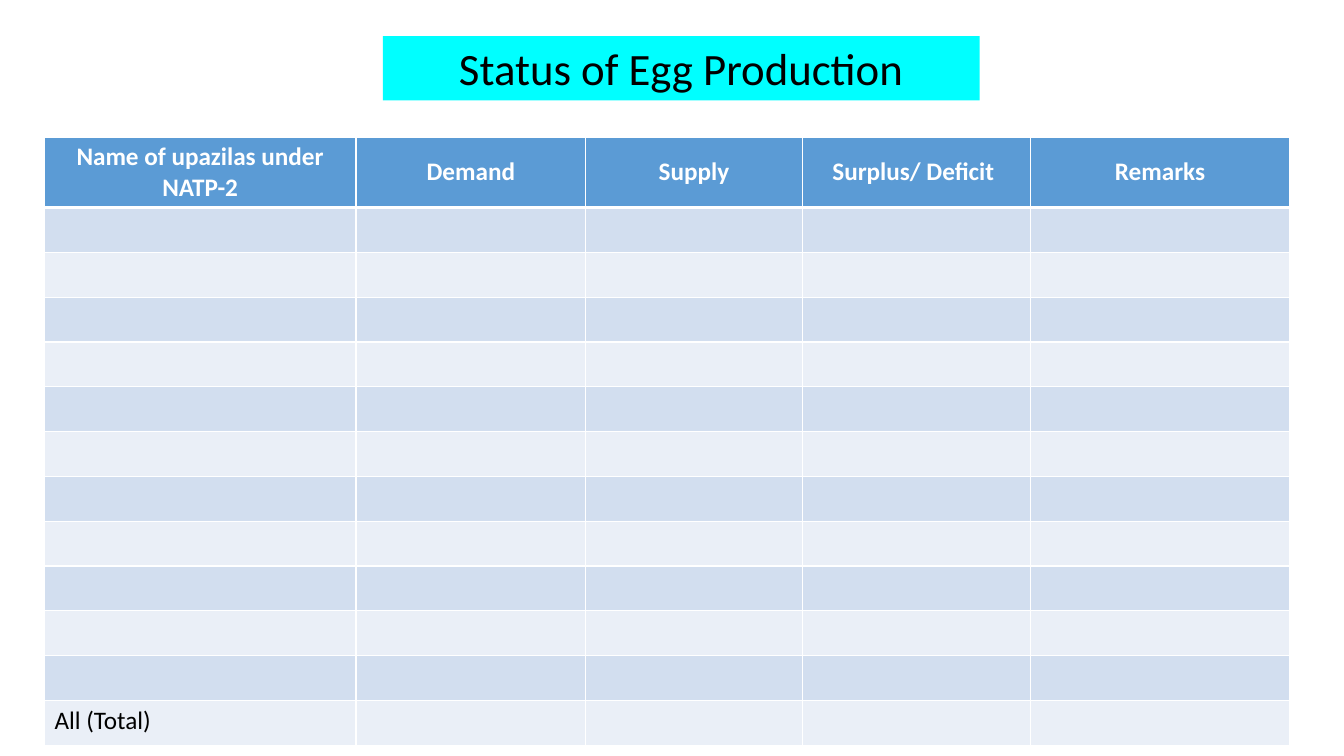
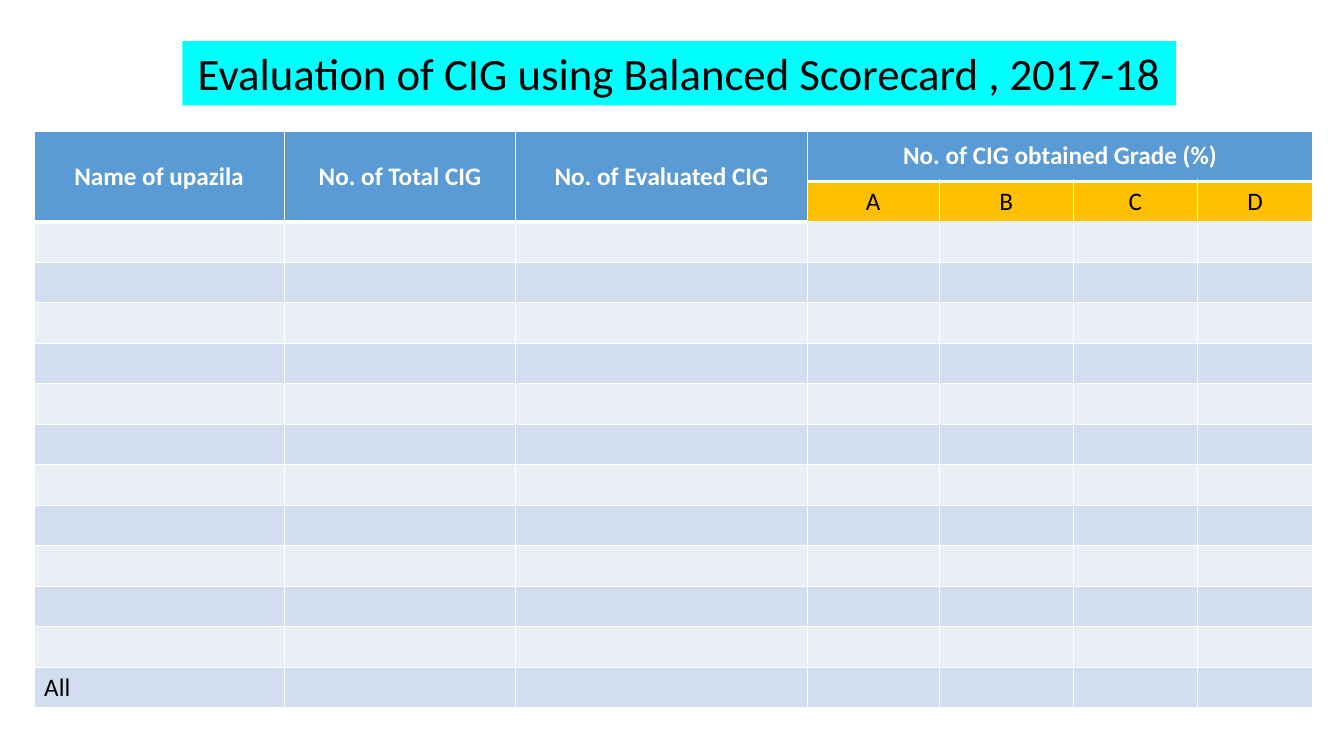
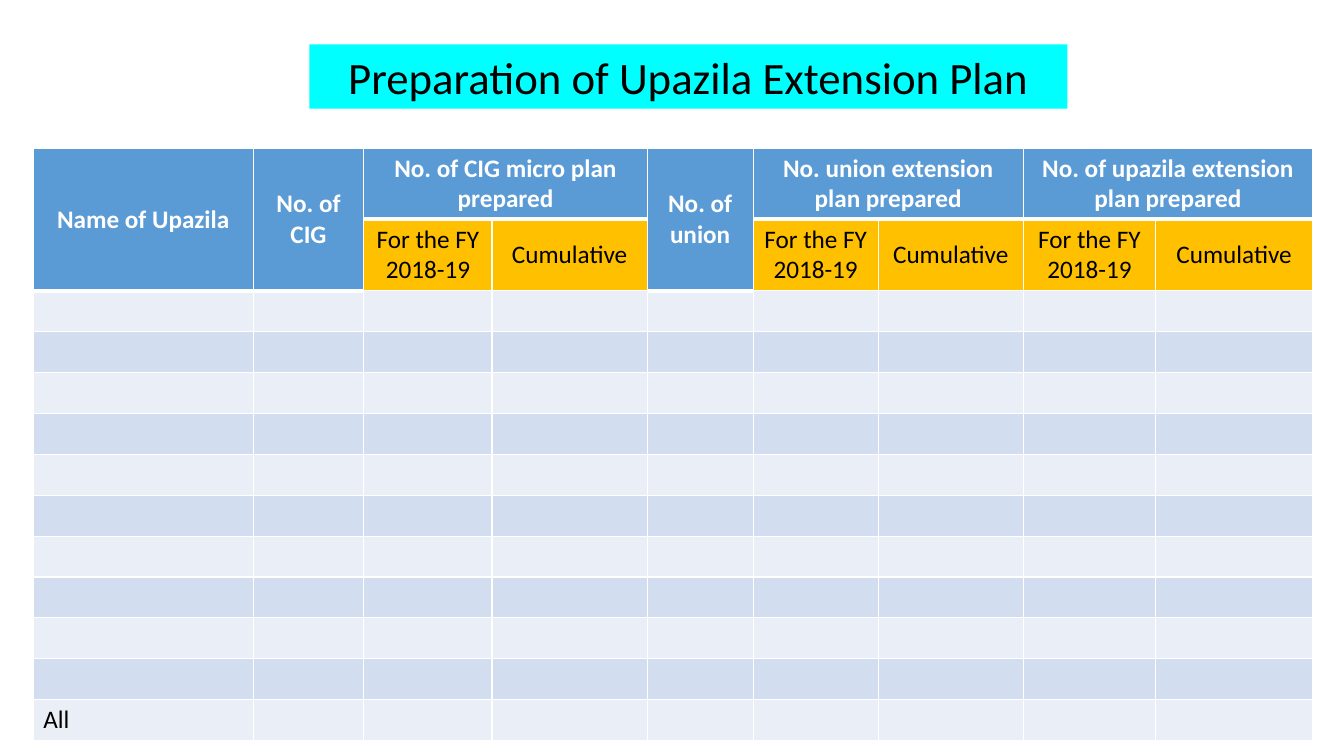
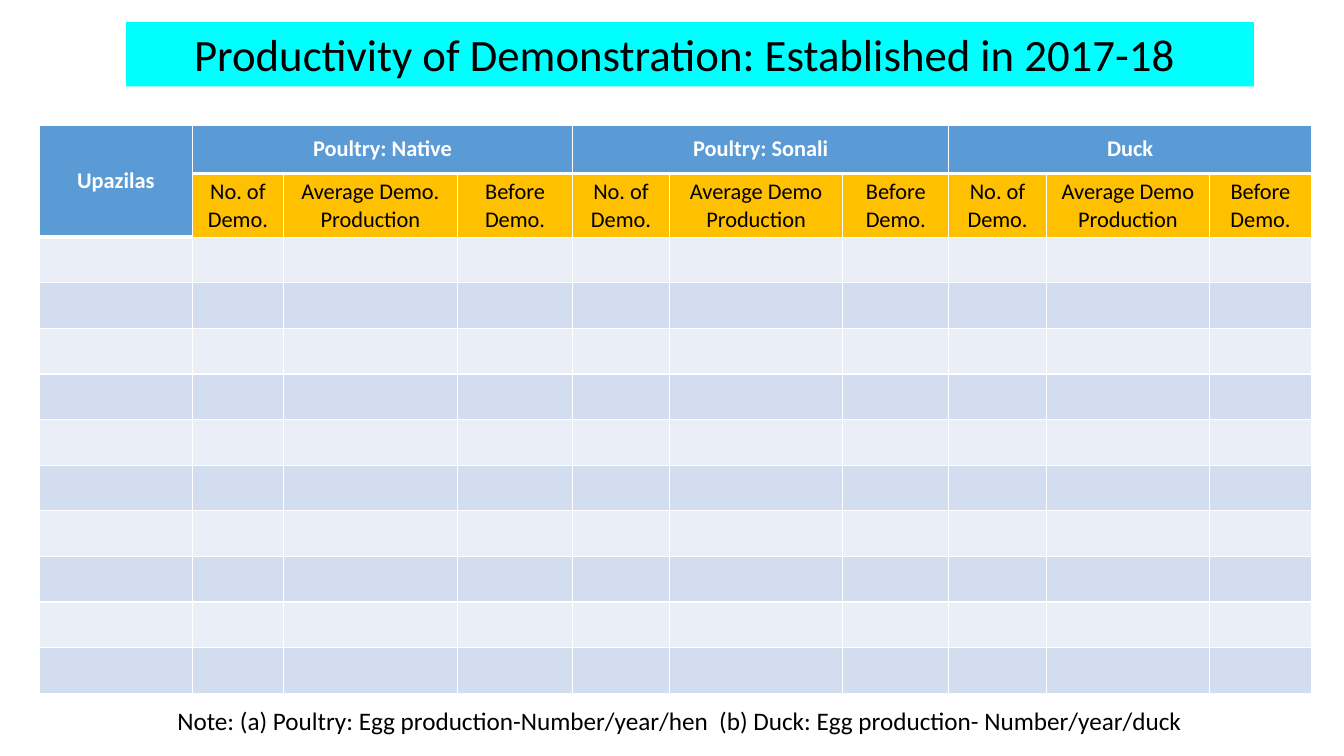
from lxml.etree import SubElement
from pptx import Presentation
from pptx.dml.color import RGBColor
from pptx.enum.text import MSO_ANCHOR, PP_ALIGN
from pptx.oxml.ns import qn
from pptx.util import Cm, Pt

FONT = "Calibri"
BLACK, WHITE = "000000", "FFFFFF"
TITLE_FILL = "00FFFF"
HEADER_FILL = "5B9BD5"
SUBHEADER_FILL = "FFC000"
BAND_FILLS = ("EAEFF7", "D2DEEF")  # even rows, odd rows


def paint(color_owner, color):
    """Give a fill a solid colour."""
    color_owner.solid()
    color_owner.fore_color.rgb = RGBColor.from_string(color)


def write(frame, text, size, color=BLACK, bold=False, align=PP_ALIGN.CENTER):
    para = frame.paragraphs[0]
    para.text = text
    para.alignment = align
    font = para.font
    font.name, font.size, font.bold = FONT, Pt(size), bold
    font.color.rgb = RGBColor.from_string(color)


def add_text(page, text, left, top, width, height, size):
    box = page.shapes.add_textbox(Cm(left), Cm(top), Cm(width), Cm(height))
    box.text_frame.word_wrap = True
    write(box.text_frame, text, size)
    return box


def add_titled_page(deck, title, left, top, width):
    page = deck.slides.add_slide(deck.slide_layouts[6])
    box = add_text(page, title, left, top, width, 1.62, 32)
    paint(box.fill, TITLE_FILL)
    return page


def style_cell(cell, fill, bottom=1):
    """Set white borders (widths in points) and the fill."""
    properties = cell._tc.get_or_add_tcPr()
    for side, width in (("L", 1), ("R", 1), ("T", 1), ("B", bottom)):
        line = SubElement(properties, qn(f"a:ln{side}"), w=str(Pt(width)))
        solid = SubElement(line, qn("a:solidFill"))
        SubElement(solid, qn("a:srgbClr"), val=WHITE)
    paint(cell.fill, fill)


def write_heading(cell, text, size, color, bold):
    cell.vertical_anchor = MSO_ANCHOR.MIDDLE
    write(cell.text_frame, text, size, color, bold)


def add_header(table, groups, head_rows, size):
    """Write headings; each group is a heading with its subheadings, if any."""
    column = 0
    for heading, subheadings in groups:
        last = column + max(len(subheadings), 1) - 1
        depth = 1 if subheadings else head_rows
        for row in range(depth):
            for index in range(column, last + 1):
                style_cell(table.cell(row, index), HEADER_FILL, bottom=3)
        top_cell = table.cell(0, column)
        if depth > 1 or last > column:
            top_cell.merge(table.cell(depth - 1, last))
        write_heading(top_cell, heading, size, WHITE, True)
        for index, subheading in enumerate(subheadings, column):
            cell = table.cell(1, index)
            style_cell(cell, SUBHEADER_FILL)
            write_heading(cell, subheading, size, BLACK, False)
        column = last + 1


def add_form(page, left, top, widths, groups, head_heights, body_height,
             body_rows, total="", size=18):
    """Add a blank form: headings, banded empty rows and an optional total."""
    heights = [*head_heights] + [body_height] * body_rows
    table = page.shapes.add_table(
        len(heights), len(widths), Cm(left), Cm(top),
        Cm(sum(widths)), Cm(sum(heights))).table
    for column, width in zip(table.columns, widths):
        column.width = Cm(width)
    for row, height in zip(table.rows, heights):
        row.height = Cm(height)
    add_header(table, groups, len(head_heights), size)
    for row in range(len(head_heights), len(heights)):
        for cell in table.rows[row].cells:
            style_cell(cell, BAND_FILLS[row % 2])
    if total:
        write(table.cell(len(heights) - 1, 0).text_frame, total, size,
              align=PP_ALIGN.LEFT)


def add_egg_page(deck):
    page = add_titled_page(deck, "Status of Egg Production", 9.65, 0.91, 15.04)
    headings = ("Name of upazilas under NATP-2", "Demand", "Supply",
                "Surplus/ Deficit ", "Remarks")
    add_form(page, 1.12, 3.45, (7.85, 5.79, 5.46, 5.74, 6.55),
             [(heading, ()) for heading in headings],
             (1.78,), 1.13, 12, "All (Total)")


def add_scorecard_page(deck):
    page = add_titled_page(
        deck, "Evaluation of CIG using Balanced Scorecard , 2017-18",
        4.6, 1.04, 25.04)
    groups = [("Name of upazila", ()), ("No. of Total CIG", ()),
              ("No. of Evaluated CIG", ()),
              ("No. of CIG obtained Grade (%)", ("A", "B", "C", "D"))]
    add_form(page, 0.86, 3.3, (6.3, 5.84, 7.34, 3.33, 3.38, 3.12, 2.92),
             groups, (1.27, 1.02), 1.02, 12, "All")


def add_extension_page(deck):
    page = add_titled_page(deck, "Preparation of Upazila Extension Plan",
                           7.8, 1.12, 19.1)
    periods = ("For the FY 2018-19", "Cumulative")
    groups = [("Name of Upazila", ()), ("No. of CIG", ()),
              ("No. of CIG micro plan prepared", periods),
              ("No. of union", ()),
              ("No. union extension plan prepared", periods),
              ("No. of upazila extension plan prepared", periods)]
    widths = (5.54, 2.79, 3.23, 3.91, 2.67, 3.15, 3.66, 3.33, 3.96)
    add_form(page, 0.84, 3.73, widths, groups, (1.78, 1.82), 1.03, 11, "All")


def add_demonstration_page(deck):
    page = add_titled_page(
        deck, "Productivity of Demonstration: Established in 2017-18 ",
        3.18, 0.56, 28.42)
    count, production, before = ("No. of Demo.", "Average Demo Production",
                                 "Before Demo.")
    groups = [("Upazilas", ()),
              ("Poultry: Native", (count, "Average Demo. Production", before)),
              ("Poultry: Sonali", (count, production, before)),
              ("Duck", (count, production, before))]
    widths = (3.86, 2.29, 4.39, 2.9, 2.44, 4.37, 2.67, 2.46, 4.11, 2.57)
    add_form(page, 0.99, 3.15, widths, groups, (1.22, 1.6), 1.15, 10, size=16)
    add_text(page, "Note: (a) Poultry: Egg production-Number/year/hen  "
             "(b) Duck: Egg production- Number/year/duck",
             1.57, 17.65, 31.12, 1.03, 18)


def main():
    deck = Presentation()
    deck.slide_width, deck.slide_height = Cm(33.87), Cm(19.05)
    add_egg_page(deck)
    add_scorecard_page(deck)
    add_extension_page(deck)
    add_demonstration_page(deck)
    deck.save("out.pptx")


if __name__ == "__main__":
    main()
